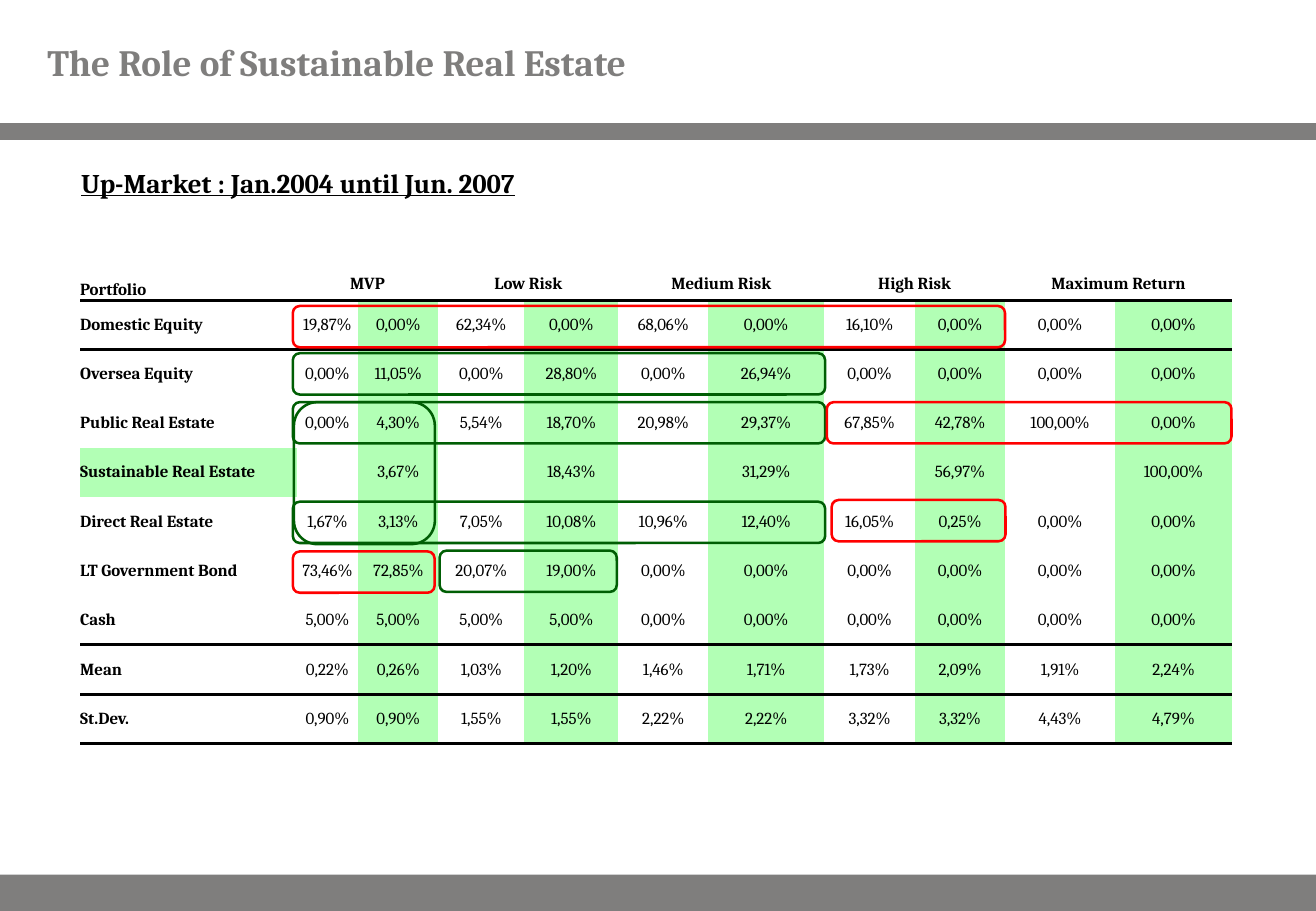
from lxml import etree
from pptx import Presentation
from pptx.dml.color import RGBColor
from pptx.enum.shapes import MSO_CONNECTOR, MSO_SHAPE
from pptx.enum.text import MSO_ANCHOR, MSO_AUTO_SIZE, PP_ALIGN
from pptx.oxml.ns import qn
from pptx.util import Pt

LINE, RECT, ROUND = MSO_CONNECTOR.STRAIGHT, MSO_SHAPE.RECTANGLE, MSO_SHAPE.ROUNDED_RECTANGLE
MIDDLE, BOTTOM = MSO_ANCHOR.MIDDLE, MSO_ANCHOR.BOTTOM
LEFT, CENTER = PP_ALIGN.LEFT, PP_ALIGN.CENTER
NO_FIT = MSO_AUTO_SIZE.NONE
FONT = "Cambria"
PLAIN_STYLE = "{2D5ABB26-0587-4C30-8999-92F81FD0307C}"
COLORS = {"gray": "7F7E7D", "black": "000000", "mint": "B2FFB5",
          "red": "FF0000", "green": "005E04"}
WIDTH, HEIGHT = 779.76, 540

GROUPS = ["MVP", "Low Risk", "Medium Risk", "High Risk", "Maximum Return"]
ROWS = [
    ("Domestic Equity", "19,87%;0,00%;62,34%;0,00%;68,06%;0,00%;16,10%;0,00%;0,00%;0,00%"),
    ("Oversea Equity", "0,00%;11,05%;0,00%;28,80%;0,00%;26,94%;0,00%;0,00%;0,00%;0,00%"),
    ("Public Real Estate", "0,00%;4,30%;5,54%;18,70%;20,98%;29,37%;67,85%;42,78%;100,00%;0,00%"),
    ("Sustainable Real Estate", ";3,67%;;18,43%;;31,29%;;56,97%;;100,00%"),
    ("Direct Real Estate", "1,67%;3,13%;7,05%;10,08%;10,96%;12,40%;16,05%;0,25%;0,00%;0,00%"),
    ("LT Government Bond", "73,46%;72,85%;20,07%;19,00%;0,00%;0,00%;0,00%;0,00%;0,00%;0,00%"),
    ("Cash", "5,00%;5,00%;5,00%;5,00%;0,00%;0,00%;0,00%;0,00%;0,00%;0,00%"),
    ("Mean", "0,22%;0,26%;1,03%;1,20%;1,46%;1,71%;1,73%;2,09%;1,91%;2,24%"),
    ("St.Dev.", "0,90%;0,90%;1,55%;1,55%;2,22%;2,22%;3,32%;3,32%;4,43%;4,79%"),
]
KEY_ROW = 4
COLS = [128.2, 36.6, 47.4, 51, 55.7, 53.3, 68.7, 53.9, 53.3, 65.2, 69.3]
HEAD_H, ROW_H = 19.5, 29.2
RULES = {0: "a:lnB", 1: "a:lnT", 7: "a:lnB", 8: "a:lnT", 9: "a:lnB"}
FRAME_H = 24.5
# left, top, width, height inside the table box
FRAMES = [
    ("red", 126, 23, 422, FRAME_H),
    ("green", 126, 51, 315.4, FRAME_H),
    ("green", 126, 80, 315.4, FRAME_H),
    ("red", 442.4, 80, 239.8, FRAME_H),
    ("green", 126, 139, 315.4, FRAME_H),
    ("red", 126, 168.5, 84, FRAME_H),
    ("red", 445.3, 138, 103, FRAME_H),
    ("green", 213, 168, 105, FRAME_H),
    ("green", 126.7, 80, 83.5, 84.2),
]


def rgb(name):
    return RGBColor.from_string(COLORS[name])


def write(frame, text, size, color="black", bold=True, align=LEFT, under=None):
    para = frame.paragraphs[0]
    para.alignment = align
    if not text:
        para.font.size = Pt(size)
        return
    run = para.add_run()
    run.text = text
    font = run.font
    font.name, font.size, font.bold, font.underline = FONT, Pt(size), bold, under
    font.color.rgb = rgb(color)


def rule(cell, side):
    """Draw a black 2 pt border on one side of a cell."""
    edge = etree.Element(qn(side), w=str(Pt(2)))
    fill = etree.SubElement(edge, qn("a:solidFill"))
    etree.SubElement(fill, qn("a:srgbClr"), val=COLORS["black"])
    cell._tc.get_or_add_tcPr().insert(0, edge)


def bars(slide, x, y, w, h):
    line = slide.shapes.add_connector(LINE, Pt(x), Pt(y + 78), Pt(x + w), Pt(y + 78))
    line.line.color.rgb = rgb("gray")
    line.line.width = Pt(10)
    etree.SubElement(line._element.spPr, qn("a:effectLst"))
    foot = slide.shapes.add_shape(RECT, Pt(x), Pt(y + h - 21.6), Pt(w), Pt(21.6))
    foot.shadow.inherit = False
    foot.fill.solid()
    foot.fill.fore_color.rgb = rgb("gray")
    foot.line.fill.background()


def heading(slide, x, y, w, h):
    title = slide.shapes.title
    title.left, title.top, title.width, title.height = Pt(x), Pt(y), Pt(w), Pt(h)
    frame = title.text_frame
    frame.auto_size, frame.vertical_anchor = NO_FIT, MIDDLE
    frame.margin_left = frame.margin_right = Pt(28)
    frame.margin_top = frame.margin_bottom = 0
    write(frame, "The Role of Sustainable Real Estate", 22, "gray")


def period(slide, x, y, w, h):
    frame = slide.shapes.add_textbox(Pt(x), Pt(y), Pt(w), Pt(h)).text_frame
    frame.word_wrap = True
    write(frame, "Up-Market : Jan.2004 until Jun. 2007", 16, under=True)


def weights(slide, x, y, w, h):
    """Place the table of portfolio weights."""
    heads = ["Portfolio"]
    for group in GROUPS:
        heads += [group, ""]
    grid = [heads] + [[name] + vals.split(";") for name, vals in ROWS]
    shape = slide.shapes.add_table(len(grid), len(COLS), Pt(x), Pt(y), Pt(w), Pt(h))
    table = shape.table
    table.first_row = table.horz_banding = False
    table._tbl.tblPr.find(qn("a:tableStyleId")).text = PLAIN_STYLE
    for col, wide in zip(table.columns, COLS):
        col.width = Pt(wide)
    for i, texts in enumerate(grid):
        table.rows[i].height = Pt(ROW_H if i else HEAD_H)
        for j, text in enumerate(texts):
            cell = table.cell(i, j)
            cell.margin_left = cell.margin_right = 0
            cell.margin_top = cell.margin_bottom = 0
            cell.vertical_anchor = MIDDLE if i or j else BOTTOM
            write(cell.text_frame, text, 10, bold=not (i and j),
                  align=CENTER if j else LEFT)
            if i and (j and j % 2 == 0 or (i, j) == (KEY_ROW, 0)):
                cell.fill.solid()
                cell.fill.fore_color.rgb = rgb("mint")
            else:
                cell.fill.background()
            if i in RULES:
                rule(cell, RULES[i])
    for j in range(1, len(COLS), 2):
        table.cell(0, j).merge(table.cell(0, j + 1))


def frames(slide, x, y):
    """Outline groups of cells, measured from the table's corner."""
    for color, left, top, w, h in FRAMES:
        box = slide.shapes.add_shape(ROUND, Pt(x + left), Pt(y + top), Pt(w), Pt(h))
        box.shadow.inherit = False
        box.fill.background()
        box.line.color.rgb = rgb(color)
        box.line.width = Pt(1.5)


def main():
    deck = Presentation()
    deck.slide_width, deck.slide_height = Pt(WIDTH), Pt(HEIGHT)
    slide = deck.slides.add_slide(deck.slide_layouts[5])
    bars(slide, 0, 0, WIDTH, HEIGHT)
    heading(slide, 0, 0, WIDTH, 72.7)
    period(slide, 41, 95, 537, 26.6)
    x, y = 47.5, 158.4
    weights(slide, x, y, sum(COLS), HEAD_H + ROW_H * len(ROWS))
    frames(slide, x, y)
    deck.save("out.pptx")


if __name__ == "__main__":
    main()
